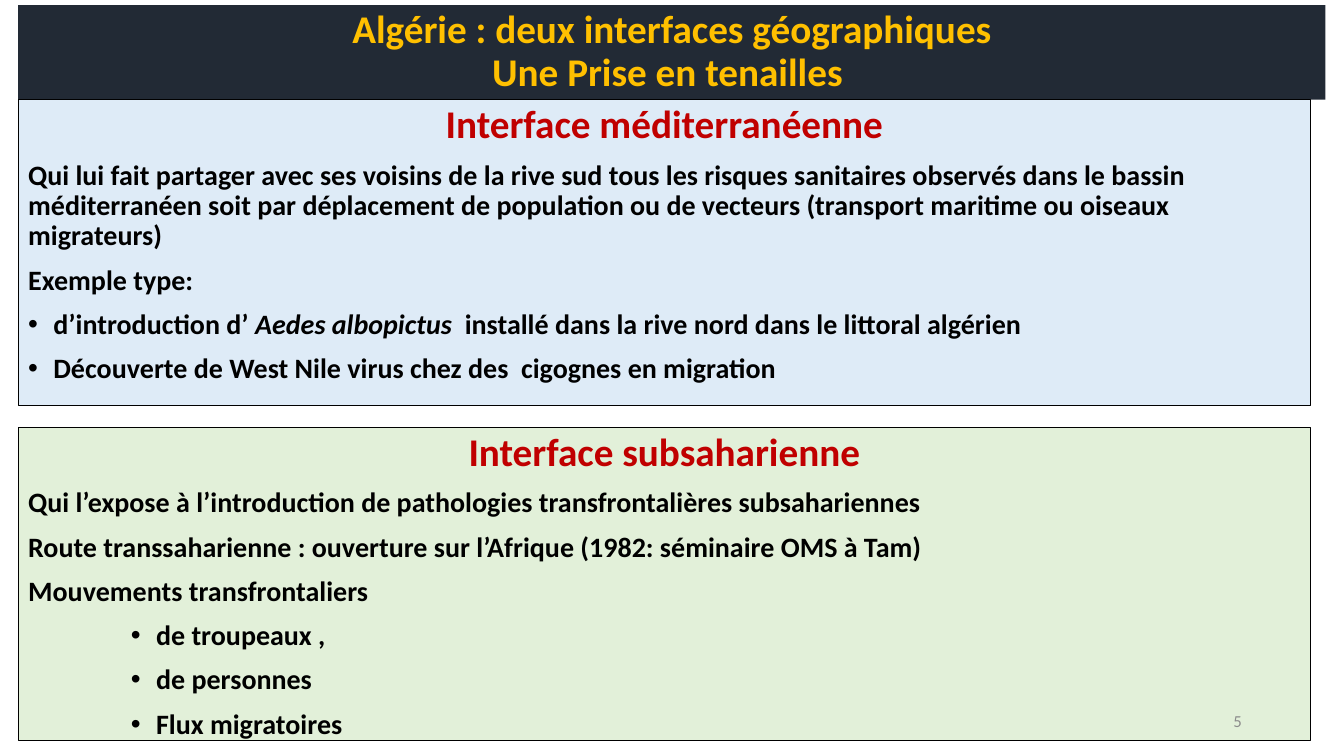
"""Build a slide on the two geographic interfaces of Algeria."""
from lxml.etree import SubElement
from pptx import Presentation
from pptx.dml.color import RGBColor
from pptx.enum.shapes import MSO_SHAPE
from pptx.enum.text import MSO_ANCHOR, PP_ALIGN
from pptx.oxml.ns import qn
from pptx.util import Pt

LEFT = 13
PANEL_WIDTH = 923
HANGING = 18
EXAMPLE_INDENT = 18
MOVEMENT_INDENT = 91.4


def color(value):
    """Return the colour for a hex string."""
    return RGBColor.from_string(value)


def add_box(slide, top, width, height, fill, line=None, anchor=MSO_ANCHOR.TOP):
    """Add a filled rectangle and return its text frame."""
    shape = slide.shapes.add_shape(
        MSO_SHAPE.RECTANGLE, Pt(LEFT), Pt(top), Pt(width), Pt(height))
    shape.shadow.inherit = False
    shape.fill.solid()
    shape.fill.fore_color.rgb = color(fill)
    if line:
        shape.line.color.rgb = color(line)
        shape.line.width = Pt(0.75)
    else:
        shape.line.fill.background()
    frame = shape.text_frame
    frame.word_wrap = True
    frame.vertical_anchor = anchor
    return frame


def add_text(paragraph, text, size=20, fill="000000", bold=True, italic=False):
    """Add a formatted run to a paragraph."""
    run = paragraph.add_run()
    run.text = text
    run.font.name = "Calibri"
    run.font.size = Pt(size)
    run.font.bold = bold
    run.font.italic = italic
    run.font.color.rgb = color(fill)


def add_bullet(paragraph, indent):
    """Give a paragraph a hanging bullet."""
    properties = paragraph._p.get_or_add_pPr()
    properties.set("marL", str(Pt(indent)))
    properties.set("indent", str(-Pt(HANGING)))
    SubElement(properties, qn("a:buFont"), typeface="Arial")
    SubElement(properties, qn("a:buChar"), char="•")


def add_title(slide, lines):
    """Add the dark title band with one line break between lines."""
    frame = add_box(slide, 3.6, 933.8, 67.7, "222A35", anchor=MSO_ANCHOR.MIDDLE)
    paragraph = frame.paragraphs[0]
    paragraph.alignment = PP_ALIGN.CENTER
    paragraph.line_spacing = 0.9
    for index, line in enumerate(lines):
        if index:
            paragraph.add_line_break()
        add_text(paragraph, line, size=28, fill="FFC000")


def add_panel(slide, top, height, fill, heading, statements, bullets, indent):
    """Add a panel with a heading, statements and bulleted lists of runs."""
    frame = add_box(slide, top, PANEL_WIDTH, height, fill, line="000000")
    title = frame.paragraphs[0]
    title.alignment = PP_ALIGN.CENTER
    title.line_spacing = 0.9
    title.space_before = Pt(10)
    add_text(title, heading, size=28, fill="C00000")
    rows = [([text], False) for text in statements]
    rows += [(parts, True) for parts in bullets]
    for parts, bulleted in rows:
        paragraph = frame.add_paragraph()
        paragraph.alignment = PP_ALIGN.LEFT
        paragraph.line_spacing = 0.9
        paragraph.space_before = Pt(10)
        if bulleted:
            add_bullet(paragraph, indent)
        for index, text in enumerate(parts):
            add_text(paragraph, text, italic=index == 1)


def add_slide_number(slide, number):
    """Add the grey slide number at the lower right."""
    box = slide.shapes.add_textbox(Pt(678.2), Pt(500.4), Pt(216), Pt(28.8))
    frame = box.text_frame
    frame.word_wrap = True
    frame.vertical_anchor = MSO_ANCHOR.MIDDLE
    paragraph = frame.paragraphs[0]
    paragraph.alignment = PP_ALIGN.RIGHT
    add_text(paragraph, number, size=12, fill="8C8C8C", bold=False)


def main():
    """Create and save the presentation."""
    presentation = Presentation()
    presentation.slide_width = Pt(960)
    presentation.slide_height = Pt(540)
    slide = presentation.slides.add_slide(presentation.slide_layouts[6])
    add_title(slide, ["Algérie : deux interfaces géographiques",
                      "Une Prise en tenailles "])
    add_panel(
        slide, 71.3, 218.2, "DEEBF7", "Interface méditerranéenne",
        ["Qui lui fait partager avec ses voisins de la rive sud tous les "
         "risques sanitaires observés dans le bassin méditerranéen soit par "
         "déplacement de population ou de vecteurs (transport maritime ou "
         "oiseaux migrateurs)",
         "Exemple type:"],
        [["d’introduction d’ ", "Aedes albopictus  ",
          "installé dans la rive nord dans le littoral algérien"],
         ["Découverte de West Nile virus chez des  cigognes en migration"]],
        EXAMPLE_INDENT)
    add_panel(
        slide, 305.3, 223.9, "E2F0D9", "Interface subsaharienne",
        ["Qui l’expose à l’introduction de pathologies transfrontalières "
         "subsahariennes",
         "Route transsaharienne : ouverture sur l’Afrique "
         "(1982: séminaire OMS à Tam)",
         "Mouvements transfrontaliers"],
        [["de troupeaux ,"], ["de personnes"], ["Flux migratoires"]],
        MOVEMENT_INDENT)
    add_slide_number(slide, "5")
    presentation.save("out.pptx")


if __name__ == "__main__":
    main()
